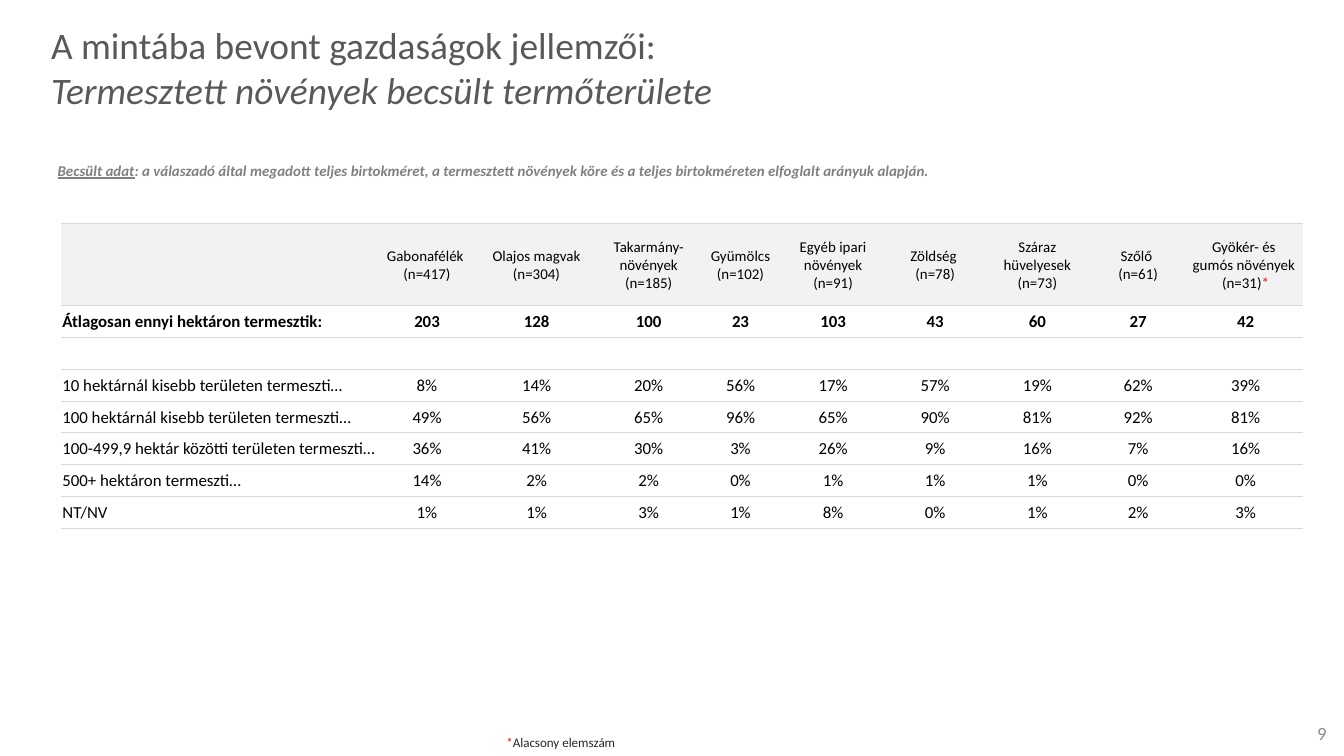
from lxml import etree
from pptx import Presentation
from pptx import util as u
from pptx.dml.color import RGBColor
from pptx.enum import text
from pptx.oxml.ns import qn

FONT = "Calibri"
COLORS = {
    "title": "595959",
    "note": "808080",
    "number": "8C8C8C",
    "footnote": "262626",
    "black": "000000",
    "red": "FF0000",
    "header": "F2F2F2",
    "border": "D9D9D9",
}
COLUMN_WIDTHS = [6.02, 1.8, 2.34, 1.9, 1.57, 1.93, 1.93, 1.93, 1.88, 2.18]
HEADER_HEIGHT, ROW_HEIGHT = 1.55, 0.6
HEADERS = [
    "",
    "Gabonafélék \n(n=417)",
    "Olajos magvak (n=304)",
    "Takarmány-növények (n=185)",
    "Gyümölcs (n=102)",
    "Egyéb ipari növények (n=91)",
    "Zöldség \n(n=78)",
    "Száraz hüvelyesek (n=73)",
    "Szőlő \n(n=61)",
    "Gyökér- és \ngumós növények \n(n=31)",
]
AVERAGES = ["Átlagosan ennyi hektáron termesztik:", 203, 128, 100, 23, 103, 43, 60, 27, 42]
SHARES = {
    "10 hektárnál kisebb területen termeszti…": [8, 14, 20, 56, 17, 57, 19, 62, 39],
    "100 hektárnál kisebb területen termeszti…": [49, 56, 65, 96, 65, 90, 81, 92, 81],
    "100-499,9 hektár közötti területen termeszti…": [36, 41, 30, 3, 26, 9, 16, 7, 16],
    "500+ hektáron termeszti…": [14, 2, 2, 0, 1, 1, 1, 0, 0],
    "NT/NV": [1, 1, 3, 1, 8, 0, 1, 2, 3],
}


def format_run(run, size, color, bold=False, italic=False, underline=False):
    font = run.font
    font.name, font.size = FONT, u.Pt(size)
    font.bold, font.italic, font.underline = bold, italic, underline
    font.color.rgb = RGBColor.from_string(COLORS[color])


def add_run(paragraph, wording, size, color, **style):
    run = paragraph.add_run()
    run.text = wording
    format_run(run, size, color, **style)


def add_title(slide, lines):
    """Fill the title placeholder; every line after the first is italic."""
    title = slide.shapes.title
    title.left, title.top, title.width, title.height = u.Cm(0.71), u.Cm(0.41), u.Cm(22.5), u.Cm(1.7)
    frame = title.text_frame
    frame.text = "\n".join(lines)
    frame.auto_size = text.MSO_AUTO_SIZE.NONE
    frame.vertical_anchor = text.MSO_ANCHOR.MIDDLE
    for index, paragraph in enumerate(frame.paragraphs):
        paragraph.alignment = text.PP_ALIGN.LEFT
        format_run(paragraph.runs[0], 20, "title", italic=index > 0)


def add_text_box(slide, left, top, width, height):
    """Return the first paragraph of a new wrapping text box."""
    frame = slide.shapes.add_textbox(u.Cm(left), u.Cm(top), u.Cm(width), u.Cm(height)).text_frame
    frame.word_wrap = True
    return frame.paragraphs[0]


def set_borders(cell):
    """Draw thin lines above and below the cell and none at its sides."""
    properties = cell._tc.get_or_add_tcPr()
    for side in ("lnL", "lnR", "lnT", "lnB"):
        line = etree.SubElement(properties, qn(f"a:{side}"), w=str(u.Pt(0.25)))
        if side in ("lnL", "lnR"):
            etree.SubElement(line, qn("a:noFill"))
        else:
            fill = etree.SubElement(line, qn("a:solidFill"))
            etree.SubElement(fill, qn("a:srgbClr"), val=COLORS["border"])


def fill_cell(cell, wording, size, centered, bold=False, shaded=False):
    set_borders(cell)
    if shaded:
        cell.fill.solid()
        cell.fill.fore_color.rgb = RGBColor.from_string(COLORS["header"])
    else:
        cell.fill.background()
    cell.margin_left = cell.margin_right = cell.margin_top = u.Cm(0.03)
    cell.margin_bottom = 0
    cell.vertical_anchor = text.MSO_ANCHOR.MIDDLE
    cell.text_frame.text = wording
    for paragraph in cell.text_frame.paragraphs:
        paragraph.alignment = text.PP_ALIGN.CENTER if centered else text.PP_ALIGN.LEFT
        for run in paragraph.runs:
            format_run(run, size, "black", bold=bold)
        if not wording:
            etree.SubElement(paragraph._p, qn("a:endParaRPr"), sz=str(size * 100))


def add_area_table(slide):
    rows = [HEADERS, [str(value) for value in AVERAGES], [""] * len(HEADERS)]
    rows += [[label] + [f"{value}%" for value in values] for label, values in SHARES.items()]
    heights = [HEADER_HEIGHT] + [ROW_HEIGHT] * (len(rows) - 1)
    table = slide.shapes.add_table(
        len(rows), len(HEADERS), u.Cm(1.15), u.Cm(4.22),
        u.Cm(sum(COLUMN_WIDTHS)), u.Cm(sum(heights)),
    ).table
    table.first_row = table.horz_banding = False
    for column, width in zip(table.columns, COLUMN_WIDTHS):
        column.width = u.Cm(width)
    for row, height in zip(table.rows, heights):
        row.height = u.Cm(height)
    for r, wordings in enumerate(rows):
        for c, wording in enumerate(wordings):
            fill_cell(table.cell(r, c), wording, 8 if r == 0 else 9,
                      centered=c > 0, bold=r == 1, shaded=r == 0)
    small_sample = table.cell(0, len(HEADERS) - 1).text_frame.paragraphs[-1]
    add_run(small_sample, "*", 8, "red")


def main():
    presentation = Presentation()
    presentation.slide_width, presentation.slide_height = u.Cm(25.4), u.Cm(14.28)
    slide = presentation.slides.add_slide(presentation.slide_layouts[5])

    add_title(slide, ["A mintába bevont gazdaságok jellemzői:",
                      "Termesztett növények becsült termőterülete"])
    add_area_table(slide)

    note = add_text_box(slide, 0.84, 2.92, 17.4, 0.6)
    add_run(note, "Becsült adat", 8, "note", bold=True, italic=True, underline=True)
    add_run(note, ": a válaszadó által megadott teljes birtokméret, a termesztett növények köre "
            "és a teljes birtokméreten elfoglalt arányuk alapján.", 8, "note", bold=True, italic=True)

    footnote = add_text_box(slide, 9.32, 13.74, 6.15, 0.55)
    add_run(footnote, "*", 7, "red")
    add_run(footnote, "Alacsony elemszám", 7, "footnote")

    number = add_text_box(slide, 24, 13.51, 1.32, 0.76)
    number.alignment = text.PP_ALIGN.RIGHT
    add_run(number, "9", 10, "number")

    presentation.save("out.pptx")


if __name__ == "__main__":
    main()
